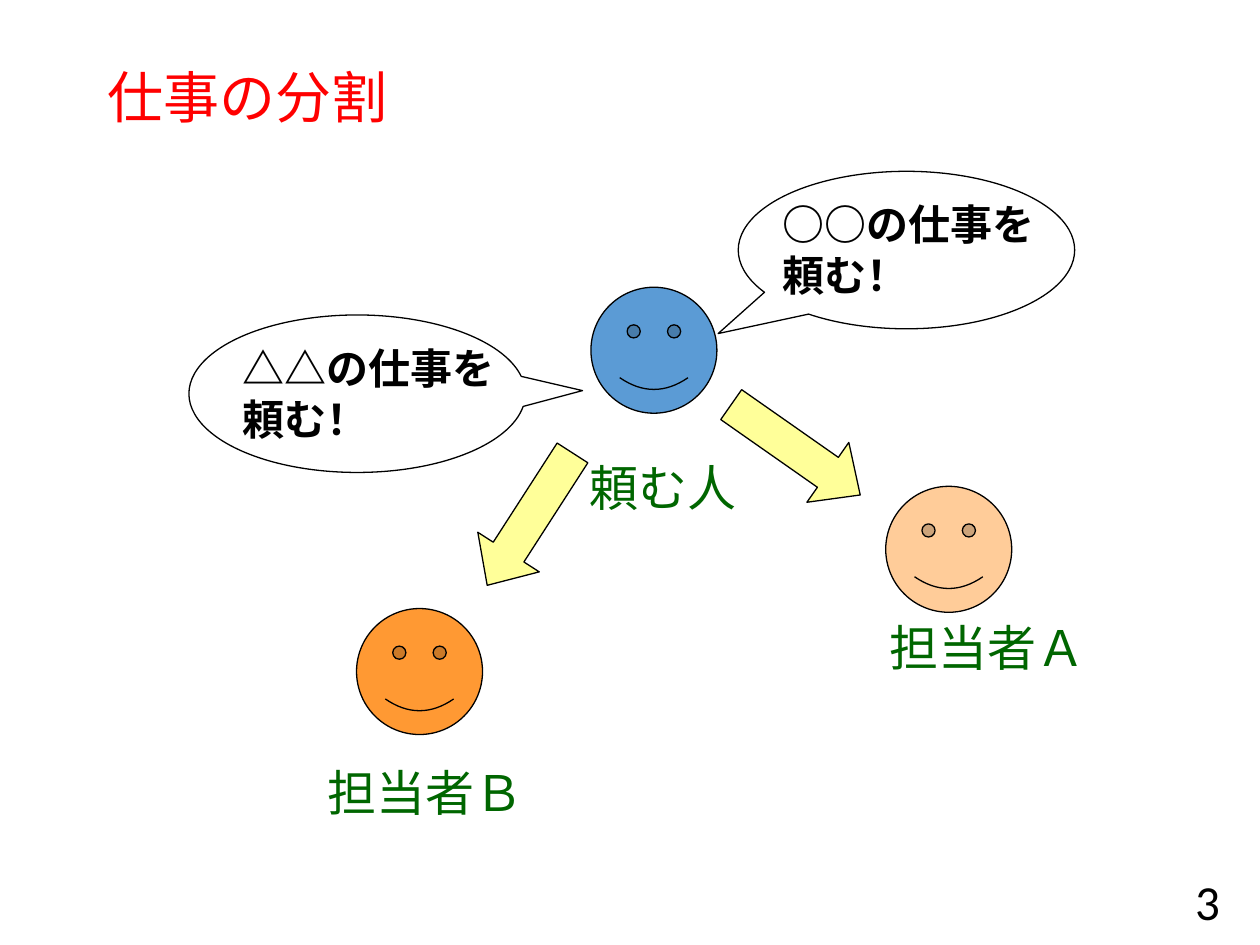
from pptx import Presentation
from pptx.dml.color import RGBColor
from pptx.enum.shapes import MSO_SHAPE
from pptx.enum.text import MSO_ANCHOR, MSO_AUTO_SIZE, PP_ALIGN
from pptx.util import Inches, Pt

FACE = MSO_SHAPE.SMILEY_FACE
ARROW = MSO_SHAPE.RIGHT_ARROW
BUBBLE = MSO_SHAPE.OVAL_CALLOUT
LEFT, RIGHT = PP_ALIGN.LEFT, PP_ALIGN.RIGHT
TOP, MIDDLE = MSO_ANCHOR.TOP, MSO_ANCHOR.MIDDLE
FIT, FIXED = MSO_AUTO_SIZE.SHAPE_TO_FIT_TEXT, MSO_AUTO_SIZE.NONE

BLACK = RGBColor(0x00, 0x00, 0x00)
RED = RGBColor(0xFF, 0x00, 0x00)
GREEN = RGBColor(0x00, 0x66, 0x00)
BLUE = RGBColor(0x5B, 0x9B, 0xD5)
PEACH = RGBColor(0xFF, 0xCC, 0x99)
ORANGE = RGBColor(0xFF, 0x99, 0x33)
YELLOW = RGBColor(0xFF, 0xFF, 0x99)


class Board:
    head_font = "Arial"
    body_font = "Calibri"
    edge = Pt(0.75)

    def __init__(self, deck):
        self.slide = deck.slides.add_slide(deck.slide_layouts[5])

    def style(self, frame, text, size, color, font, bold=False,
              align=LEFT, anchor=TOP):
        frame.text = text
        frame.vertical_anchor = anchor
        for para in frame.paragraphs:
            para.alignment = align
            for run in para.runs:
                run.font.name = font
                run.font.size = Pt(size)
                run.font.bold = bold
                run.font.color.rgb = color

    def title(self, text):
        head = self.slide.shapes.title
        head.left, head.top = Inches(0.75), Inches(0.17)
        head.width, head.height = Inches(8.5), Inches(1.25)
        self.style(head.text_frame, text, 32, RED, self.head_font,
                   anchor=MIDDLE)
        head.text_frame.auto_size = FIXED
        head.text_frame.paragraphs[0].line_spacing = 0.9

    def shape(self, kind, left, top, width, height, fill=None):
        item = self.slide.shapes.add_shape(
            kind, Inches(left), Inches(top), Inches(width), Inches(height))
        item.shadow.inherit = False
        if fill is None:
            item.fill.background()
        else:
            item.fill.solid()
            item.fill.fore_color.rgb = fill
        item.line.color.rgb = BLACK
        item.line.width = self.edge
        return item

    def text(self, text, left, top, width, height, size=28, color=GREEN,
             wrap=True, **look):
        box = self.slide.shapes.add_textbox(
            Inches(left), Inches(top), Inches(width), Inches(height))
        frame = box.text_frame
        self.style(frame, text, size, color, self.body_font, **look)
        frame.word_wrap = wrap
        frame.auto_size = FIXED if wrap else FIT

    def face(self, left, top, fill):
        self.shape(FACE, left, top, 1, 1, fill)

    def arrow(self, left, top, angle):
        item = self.shape(ARROW, left, top, 1.25, 0.58, YELLOW)
        item.rotation = angle
        item.adjustments[1] = 0.54

    def bubble(self, left, top, tip, text, text_left):
        item = self.shape(BUBBLE, left, top, 2.67, 1.25)
        item.adjustments[0], item.adjustments[1] = tip
        self.text(text, text_left, top + 0.17, 2.22, 0.91, 24, BLACK,
                  wrap=False, bold=True)


def main():
    deck = Presentation()
    deck.slide_width, deck.slide_height = Inches(10), Inches(7.5)
    board = Board(deck)
    board.title("仕事の分割")

    for left, top, fill in ((4.69, 2.28, BLUE), (7.03, 3.86, PEACH),
                            (2.83, 4.83, ORANGE)):
        board.face(left, top, fill)

    for left, top, angle in ((5.69, 3.28, 35), (3.58, 3.83, 122.8)):
        board.arrow(left, top, angle)

    board.bubble(5.86, 1.36, (-0.56, 0.53), "○○の仕事を\n頼む！", 6.11)
    board.bubble(1.5, 2.5, (0.67, -0.02), "△△の仕事を\n頼む！", 1.83)

    for name, left, top, width in (("頼む人", 4.58, 3.58, 1.5),
                                   ("担当者Ａ", 6.96, 4.85, 1.96),
                                   ("担当者Ｂ", 2.5, 6, 1.96)):
        board.text(name, left, top, width, 0.75)

    board.text("3", 7.53, 6.95, 2.25, 0.4, color=BLACK,
               align=RIGHT, anchor=MIDDLE)
    deck.save("out.pptx")


if __name__ == "__main__":
    main()
